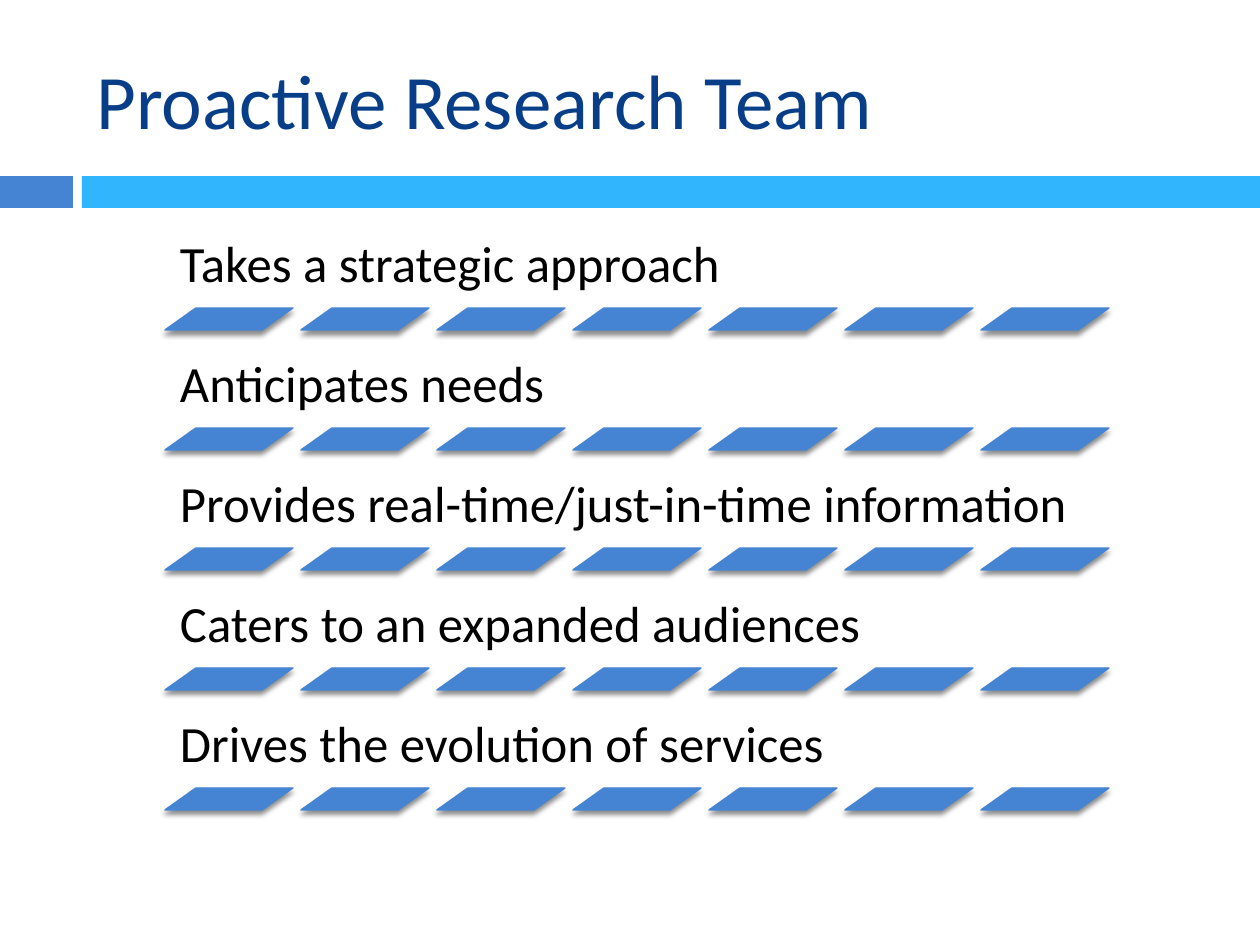
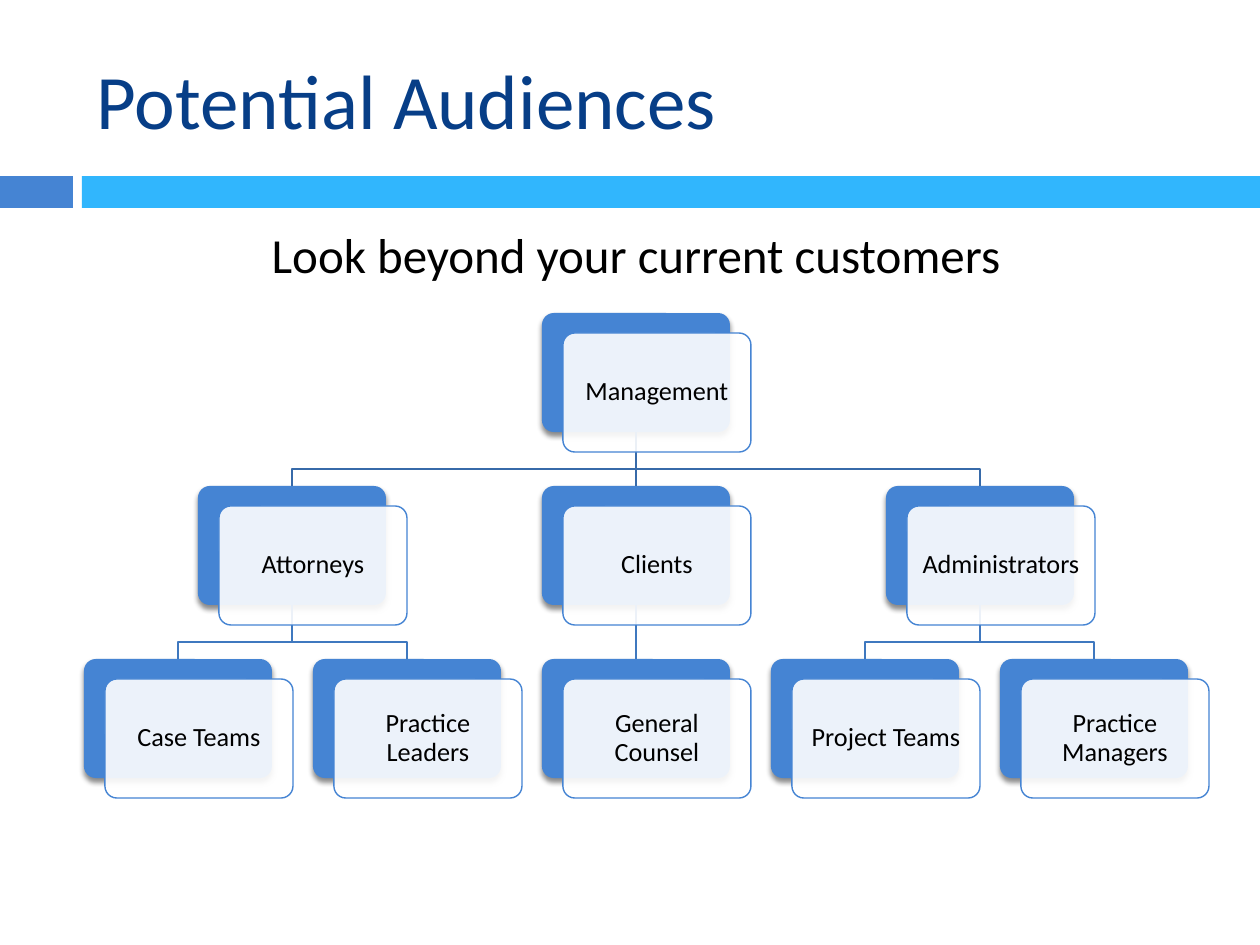
from dataclasses import dataclass
from typing import Any, Optional

import lxml.etree
import pptx
import pptx.dml.color
import pptx.enum.shapes
import pptx.enum.text
import pptx.oxml.ns
import pptx.util

EMU_PER_PX = 914400 / 126
SHAPE = pptx.enum.shapes.MSO_SHAPE
ALIGN = pptx.enum.text.PP_ALIGN
ANCHOR = pptx.enum.text.MSO_ANCHOR


@dataclass(frozen=True)
class Theme:
    font: str = "Calibri"
    title_colour: str = "073E87"
    text_colour: str = "000000"
    accent: str = "4584D3"
    band: str = "31B6FD"
    card: str = "FFFFFF"
    upper_line: str = "376AA9"
    lower_line: str = "3F78BF"
    title_size: int = 44
    point_size: int = 29
    lead_size: int = 28
    card_size: int = 15
    line_width: float = 0.79
    card_opacity: int = 90
    shadow_opacity: int = 45


@dataclass(frozen=True)
class Box:
    left: int
    top: int
    width: int
    height: int

    def moved(self, right: int, down: int) -> "Box":
        return Box(self.left + right, self.top + down, self.width, self.height)

    @property
    def middle(self) -> int:
        return self.left + self.width // 2

    @property
    def bottom(self) -> int:
        return self.top + self.height

    def emu(self) -> list[int]:
        return [px(n) for n in (self.left, self.top, self.width, self.height)]


@dataclass(frozen=True)
class Audience:
    """A card of the tree; column counts leaf widths from the centre."""
    name: str
    level: int
    column: float
    parent: Optional[str] = None

    @property
    def box(self) -> Box:
        return Box(round(542 + 229 * self.column), 313 + 173 * self.level, 188, 119)


THEME = Theme()
TITLE_BOX = Box(84, 31, 1124, 136)
BANDS = [(Box(0, 176, 73, 32), THEME.accent), (Box(82, 176, 1178, 32), THEME.band)]

POINTS = [
    "Takes a strategic approach",
    "Anticipates needs",
    "Provides real-time/just-in-time information",
    "Caters to an expanded audiences",
    "Drives the evolution of services",
]
POINT_BOX = Box(165, 221, 963, 87)
DASH_BOX = Box(165, 308, 128, 22)
POINT_STEP = 120
DASH_STEP = 136
DASH_COUNT = 7

LEAD_BOX = Box(199, 218, 874, 72)
AUDIENCES = [
    Audience("Management", 0, 0),
    Audience("Attorneys", 1, -1.5, "Management"),
    Audience("Clients", 1, 0, "Management"),
    Audience("Administrators", 1, 1.5, "Management"),
    Audience("Case Teams", 2, -2, "Attorneys"),
    Audience("Practice Leaders", 2, -1, "Attorneys"),
    Audience("General Counsel", 2, 0, "Clients"),
    Audience("Project Teams", 2, 1, "Administrators"),
    Audience("Practice Managers", 2, 2, "Administrators"),
]
CARD_SHIFT = (21, 20)
BEND_ABOVE_CHILD = 17


def px(length: int) -> int:
    return pptx.util.Emu(round(length * EMU_PER_PX))


def rgb(colour: str) -> pptx.dml.color.RGBColor:
    return pptx.dml.color.RGBColor.from_string(colour)


def add_xml(parent: Any, tag: str, **attributes: Any) -> Any:
    values = {name: str(value) for name, value in attributes.items()}
    return lxml.etree.SubElement(parent, pptx.oxml.ns.qn(tag), values)


def set_line(shape: Any, colour: str) -> None:
    shape.line.color.rgb = rgb(colour)
    shape.line.width = pptx.util.Pt(THEME.line_width)


def add_block(page: Any, kind: Any, box: Box, fill: str, line: Optional[str] = None) -> Any:
    """Add a flat preset shape, outlined only when a line colour is given."""
    block = page.shapes.add_shape(kind, *box.emu())
    block.shadow.inherit = False
    block.fill.solid()
    block.fill.fore_color.rgb = rgb(fill)
    if line:
        set_line(block, line)
    else:
        block.line.fill.background()
    return block


def drop_shadow(shape: Any) -> None:
    effects = shape.element.spPr.find(pptx.oxml.ns.qn("a:effectLst"))
    shadow = add_xml(effects, "a:outerShdw", blurRad=38100, dist=30000,
                     dir=5400000, rotWithShape=0)
    black = add_xml(shadow, "a:srgbClr", val="000000")
    add_xml(black, "a:alpha", val=THEME.shadow_opacity * 1000)


def set_opacity(shape: Any, percent: int) -> None:
    colour = shape.element.spPr.find("/".join(
        pptx.oxml.ns.qn(tag) for tag in ("a:solidFill", "a:srgbClr")))
    add_xml(colour, "a:alpha", val=percent * 1000)


def write(shape: Any, text: str, size: int, colour: str = THEME.text_colour,
          align: Any = ALIGN.LEFT, anchor: Any = ANCHOR.MIDDLE,
          inset: Optional[int] = None, spacing: Optional[float] = None) -> None:
    frame = shape.text_frame
    frame.word_wrap = True
    frame.vertical_anchor = anchor
    if inset is not None:
        frame.margin_left = frame.margin_right = px(inset)
        frame.margin_top = frame.margin_bottom = px(inset)
    para = frame.paragraphs[0]
    para.text = text
    para.alignment = align
    para.line_spacing = spacing
    para.font.name = THEME.font
    para.font.size = pptx.util.Pt(size)
    para.font.color.rgb = rgb(colour)


def add_page(deck: Any, title: str) -> Any:
    page = deck.slides.add_slide(deck.slide_layouts[6])
    for box, colour in BANDS:
        add_block(page, SHAPE.RECTANGLE, box, colour)
    title_box = page.shapes.add_textbox(*TITLE_BOX.emu())
    write(title_box, title, THEME.title_size, THEME.title_colour)
    return page


def add_point(page: Any, text: str, row: int) -> None:
    """Add one statement with its row of slanted dashes."""
    down = row * POINT_STEP
    point = page.shapes.add_textbox(*POINT_BOX.moved(0, down).emu())
    write(point, text, THEME.point_size, anchor=ANCHOR.BOTTOM, inset=15, spacing=0.9)
    for column in range(DASH_COUNT):
        box = DASH_BOX.moved(column * DASH_STEP, down)
        dash = add_block(page, SHAPE.PARALLELOGRAM, box, THEME.accent, THEME.accent)
        dash.adjustments[0] = 1.408
        drop_shadow(dash)


def add_rounded(page: Any, box: Box, fill: str, line: Optional[str] = None) -> Any:
    block = add_block(page, SHAPE.ROUNDED_RECTANGLE, box, fill, line)
    block.adjustments[0] = 0.1
    return block


def add_straight_branch(page: Any, parent: Any, child: Any, colour: str) -> None:
    branch = page.shapes.add_connector(pptx.enum.shapes.MSO_CONNECTOR.STRAIGHT, 0, 0, 0, 0)
    branch.begin_connect(parent, 2)
    branch.end_connect(child, 0)
    set_line(branch, colour)
    add_xml(branch.element.spPr, "a:effectLst")


def add_bent_branch(page: Any, parent: Box, child: Box, colour: str) -> None:
    bend = child.top - BEND_ABOVE_CHILD
    outline = page.shapes.build_freeform(parent.middle, parent.bottom, scale=EMU_PER_PX)
    outline.add_line_segments(
        [(parent.middle, bend), (child.middle, bend), (child.middle, child.top)],
        close=False)
    branch = outline.convert_to_shape()
    branch.shadow.inherit = False
    branch.fill.background()
    set_line(branch, colour)


def add_tree(page: Any) -> None:
    """Stack back plates, branches and lettered cards in that order."""
    by_name = {audience.name: audience for audience in AUDIENCES}
    plates = {}
    for audience in AUDIENCES:
        plates[audience.name] = add_rounded(page, audience.box, THEME.accent)
        drop_shadow(plates[audience.name])
    for audience in AUDIENCES:
        if audience.parent is None:
            continue
        parent = by_name[audience.parent]
        colour = THEME.upper_line if audience.level == 1 else THEME.lower_line
        if parent.column == audience.column:
            add_straight_branch(page, plates[parent.name], plates[audience.name], colour)
        else:
            add_bent_branch(page, parent.box, audience.box, colour)
    for audience in AUDIENCES:
        card = add_rounded(page, audience.box.moved(*CARD_SHIFT), THEME.card, THEME.accent)
        set_opacity(card, THEME.card_opacity)
        write(card, audience.name, THEME.card_size, align=ALIGN.CENTER, inset=11, spacing=0.9)


def main() -> None:
    deck = pptx.Presentation()
    deck.slide_width, deck.slide_height = px(1260), px(945)

    page = add_page(deck, "Proactive Research Team")
    for row, text in enumerate(POINTS):
        add_point(page, text, row)

    page = add_page(deck, "Potential Audiences")
    add_tree(page)
    lead = page.shapes.add_textbox(*LEAD_BOX.emu())
    write(lead, "Look beyond your current customers", THEME.lead_size,
          align=ALIGN.CENTER, anchor=ANCHOR.TOP)

    deck.save("out.pptx")


if __name__ == "__main__":
    main()
